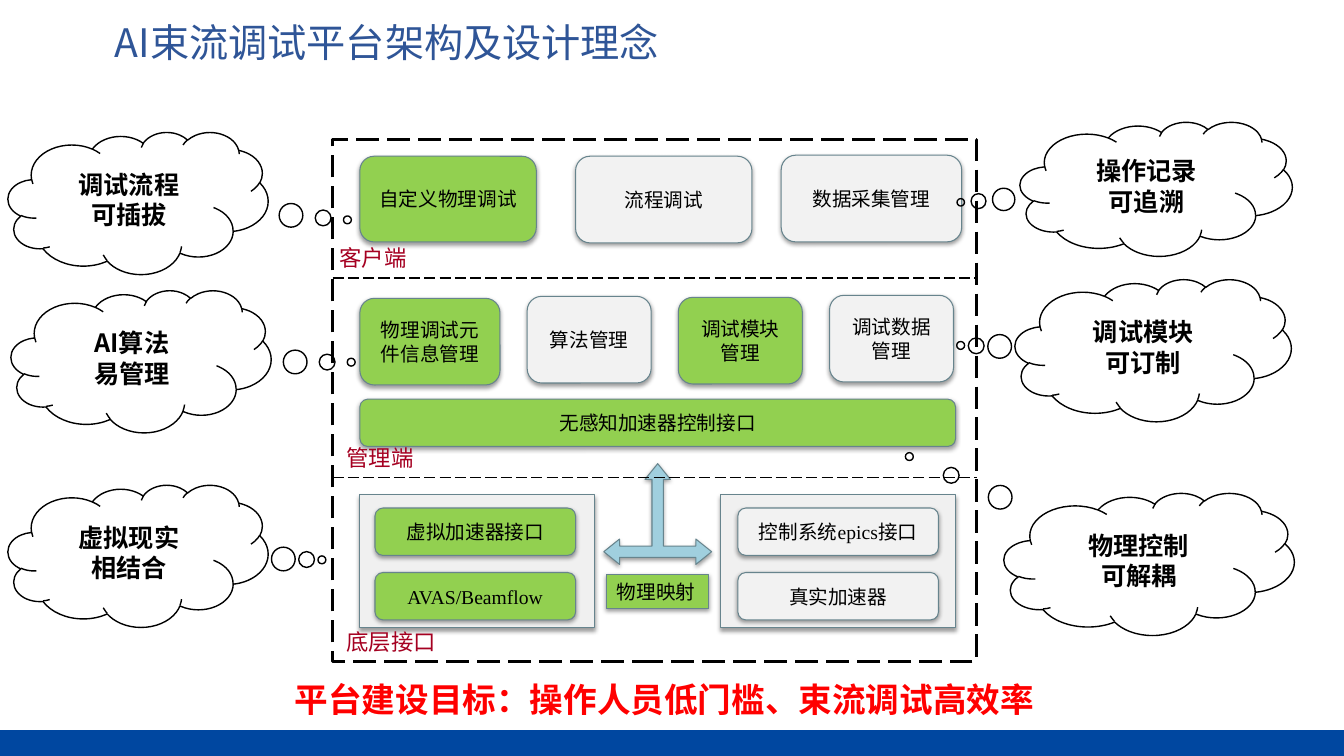
from dataclasses import dataclass
from lxml.etree import SubElement as Sub
from pptx import Presentation
from pptx.dml.color import RGBColor as Rgb
from pptx.enum.dml import MSO_LINE as Dash
from pptx.enum.shapes import MSO_CONNECTOR as Link, MSO_SHAPE as Kind
from pptx.enum.text import MSO_ANCHOR as Anchor, MSO_AUTO_SIZE as Fit, PP_ALIGN as Align
from pptx.oxml.ns import qn
from pptx.util import Inches, Pt


@dataclass(frozen=True)
class Theme:
    cell: float = 0.1
    cols: float = 133.33
    rows: float = 75
    sans: str = "Noto Sans CJK SC"
    serif: str = "Times New Roman"
    plain: str = "Arial"
    black: str = "000000"
    blue: str = "0047A0"
    navy: str = "2F5597"
    green: str = "92D050"
    gray: str = "F2F2F2"
    panel: str = "F0F0F0"
    aqua: str = "A0CFDE"
    edge: str = "67848D"
    wine: str = "A50021"
    red: str = "FF0000"
    head: int = 28
    goal: int = 24
    cloud: int = 18
    layer: int = 16
    box: int = 14


def put(item, vals):
    for key, val in vals.items():
        setattr(item, key, val)


class Deck:
    def __init__(self, theme):
        self.theme = theme
        self.show = Presentation()
        put(self.show, {"slide_width": self.unit(theme.cols),
                        "slide_height": self.unit(theme.rows)})
        self.slide = self.show.slides.add_slide(self.show.slide_layouts[5])

    def unit(self, num):
        return Inches(num * self.theme.cell)

    def area(self, at):
        return [self.unit(num) for num in at]

    def letter(self, shape, text, size, color, face, bold=False,
               align=Align.CENTER, anchor=Anchor.MIDDLE):
        frame = shape.text_frame
        put(frame, {"text": text, "word_wrap": True,
                    "auto_size": Fit.NONE, "vertical_anchor": anchor})
        for para in frame.paragraphs:
            para.alignment = align
            for run in para.runs:
                put(run.font, {"name": face, "size": Pt(size), "bold": bold})
                run.font.color.rgb = Rgb.from_string(color)
                Sub(run.font._element, qn("a:ea"), typeface=self.theme.sans)

    def title(self, at, text):
        shape = self.slide.shapes.title
        put(shape, dict(zip(("left", "top", "width", "height"), self.area(at))))
        sides = ("left", "top", "right", "bottom")
        put(shape.text_frame, {f"margin_{side}": 0 for side in sides})
        self.letter(shape, text, self.theme.head, self.theme.navy,
                    self.theme.sans, align=Align.LEFT, anchor=Anchor.TOP)

    def label(self, at, text, size, color, face, **form):
        shape = self.slide.shapes.add_textbox(*self.area(at))
        self.letter(shape, text, size, color, face, anchor=Anchor.TOP, **form)

    def stroke(self, line, color, width, dash=None):
        line.color.rgb = Rgb.from_string(color)
        put(line, {"width": Pt(width), "dash_style": dash})

    def shape(self, kind, at, fill, color, width, dash=None, adj=()):
        shape = self.slide.shapes.add_shape(kind, *self.area(at))
        if fill:
            shape.fill.solid()
            shape.fill.fore_color.rgb = Rgb.from_string(fill)
        else:
            shape.fill.background()
        self.stroke(shape.line, color, width, dash)
        for pos, val in enumerate(adj):
            shape.adjustments[pos] = val
        shape.shadow.inherit = False
        return shape

    def block(self, kind, at, fill, text="", adj=(), **form):
        shape = self.shape(kind, at, fill, self.theme.edge, 0.75, adj=adj)
        glow = Sub(shape._element.spPr.find(qn("a:effectLst")), qn("a:outerShdw"),
                   blurRad="40000", dist="20000", dir="5400000", rotWithShape="0")
        tint = Sub(glow, qn("a:srgbClr"), val=self.theme.black)
        Sub(tint, qn("a:alpha"), val="38000")
        if text:
            self.letter(shape, text, self.theme.box, self.theme.black,
                        self.theme.serif, **form)

    def cloud(self, at, tail, text):
        shape = self.shape(Kind.CLOUD_CALLOUT, at, None, self.theme.black, 1, adj=tail)
        self.letter(shape, text, self.theme.cloud, self.theme.black,
                    self.theme.sans, bold=True)

    def rule(self, left, right, row):
        ends = self.area((left, row, right, row))
        line = self.slide.shapes.add_connector(Link.STRAIGHT, *ends)
        self.stroke(line.line, self.theme.black, 1, Dash.LONG_DASH)
        Sub(line._element.spPr, qn("a:effectLst"))


def main():
    look = Theme()
    deck = Deck(look)
    deck.title((11.4, 1.8, 106.7, 4.7), "AI束流调试平台架构及设计理念")
    deck.shape(Kind.RECTANGLE, (0, 72.5, look.cols, 2.5), look.blue, look.blue, 1)

    left, wide = 33, 63.9
    deck.shape(Kind.RECTANGLE, (left, 13.8, wide, 51.8), None, look.black, 2,
               Dash.LONG_DASH)
    for col in (35.7, 71.5):
        deck.block(Kind.RECTANGLE, (col, 49.1, 23.3, 13.2), look.panel)

    ports = (
        (37.2, look.green, ("虚拟加速器接口", "AVAS/Beamflow")),
        (73.2, look.gray, ("控制系统epics接口", "真实加速器")),
    )
    for col, fill, names in ports:
        for step, name in enumerate(names):
            deck.block(Kind.ROUNDED_RECTANGLE, (col, 50.4 + 6.4 * step, 19.9, 4.7),
                       fill, name)
    deck.block(Kind.LEFT_RIGHT_UP_ARROW, (59.9, 46, 10.7, 10), look.aqua,
               adj=(0.113, 0.126, 0.157))
    deck.block(Kind.RECTANGLE, (60.2, 57, 10.1, 3.4), look.green, "物理映射",
               align=Align.LEFT, anchor=Anchor.TOP)

    parts = (
        (35.7, 39.6, 59.1, 4.7, look.green, "无感知加速器控制接口"),
        (35.7, 29.6, 13.9, 8.6, look.green, "物理调试元件信息管理"),
        (52.3, 29.4, 12.3, 8.6, look.gray, "算法管理"),
        (67.3, 29.5, 12.3, 8.6, look.green, "调试模块管理"),
        (82.3, 29.3, 12.3, 8.6, look.gray, "调试数据管理"),
        (35.7, 15.5, 17.5, 8.5, look.green, "自定义物理调试"),
        (57.1, 15.5, 17.5, 8.6, look.gray, "流程调试"),
        (77.5, 15.4, 17.9, 8.6, look.gray, "数据采集管理"),
    )
    for *at, fill, name in parts:
        deck.block(Kind.ROUNDED_RECTANGLE, at, fill, name)

    for row in (27.6, 47.4):
        deck.rule(left, left + wide, row)
    layers = ((32.7, 23.7, "客户端"), (33.4, 43.6, "管理端"), (33.4, 61.8, "底层接口"))
    for col, row, name in layers:
        deck.label((col, row, 18.5, 3.7), name, look.layer, look.wine, look.plain,
                   align=Align.LEFT)

    clouds = (
        ((0.8, 13.1, 25.8, 14.1), (0.805, 0.118), "调试流程\n可插拔"),
        ((1.1, 28.8, 25.8, 14.1), (0.808, 0.006), "AI算法\n易管理"),
        ((0.8, 48.1, 25.8, 14.1), (0.707, 0.028), "虚拟现实\n相结合"),
        ((101.2, 12.1, 27, 13.3), (-0.718, 0.1), "操作记录\n可追溯"),
        ((100.7, 27.7, 27.4, 14.1), (-0.697, -0.034), "调试模块\n可订制"),
        ((99.6, 48.9, 28.8, 14.1), (-0.826, -0.756), "物理控制\n可解耦"),
    )
    for at, tail, text in clouds:
        deck.cloud(at, tail, text)

    deck.label((21.7, 66.9, 88.4, 5), "平台建设目标：操作人员低门槛、束流调试高效率",
               look.goal, look.red, look.sans, bold=True)
    deck.show.save("out.pptx")


if __name__ == "__main__":
    main()
